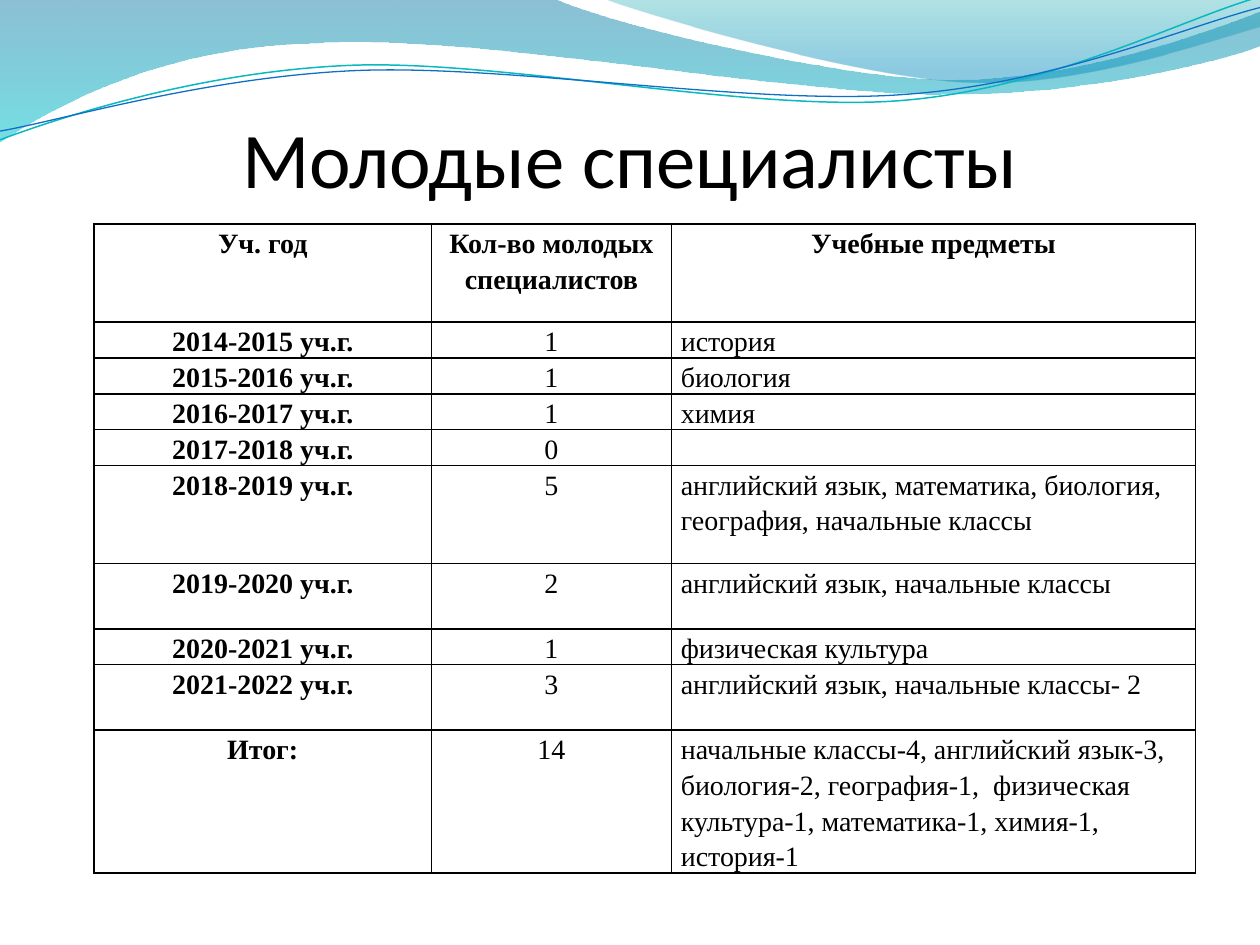
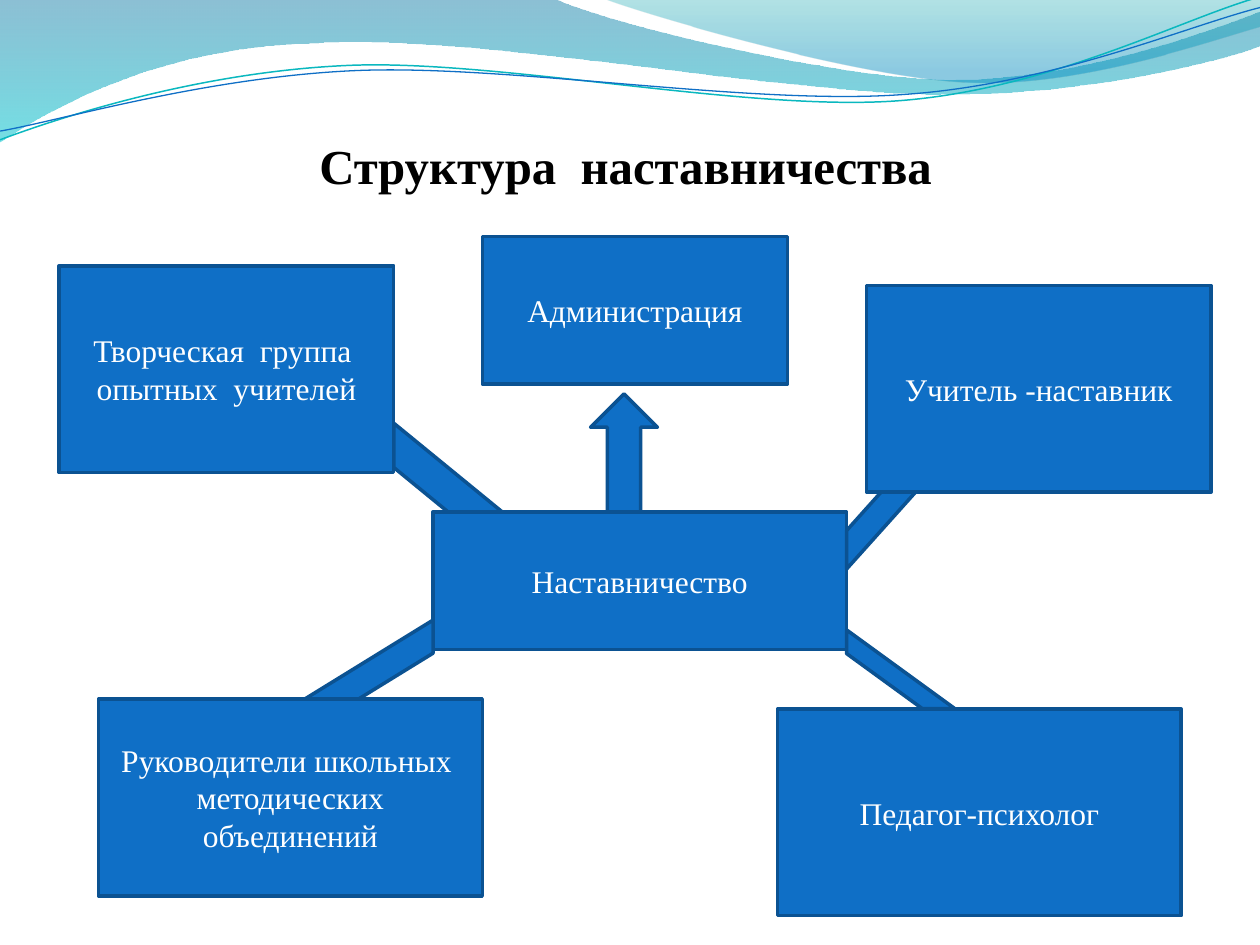
from lxml import etree
from pptx import Presentation
from pptx.dml.color import RGBColor
from pptx.enum.shapes import MSO_SHAPE
from pptx.enum.text import MSO_ANCHOR, MSO_AUTO_SIZE, PP_ALIGN
from pptx.oxml.ns import qn
from pptx.util import Pt

RECT, STRIPE, UP_ARROW = MSO_SHAPE.RECTANGLE, MSO_SHAPE.DIAGONAL_STRIPE, MSO_SHAPE.UP_ARROW
LEFT, CENTER = PP_ALIGN.LEFT, PP_ALIGN.CENTER
BOTTOM, MIDDLE = MSO_ANCHOR.BOTTOM, MSO_ANCHOR.MIDDLE
TITLE_ONLY = 5
SERIF, SANS = "Times New Roman", "Calibri"
COLORS = {
    "black": "000000", "white": "FFFFFF", "blue": "0F6FC6", "navy": "0B5292",
    "turquoise": "0AB8BF", "deep": "0074A1", "aqua": "00C6CF",
    "teal": "00A1A9", "sky": "008BBF",
}
RGB = {name: RGBColor.from_string(value) for name, value in COLORS.items()}


def put_text(tf, text, size=16, font=SERIF, color="black", bold=False,
             align=CENTER, spacing=None, anchor=None):
    """Fill a text frame, one paragraph per line of text."""
    if anchor is not None:
        tf.vertical_anchor = anchor
    for i, line in enumerate(text.split("\n")):
        p = tf.paragraphs[0] if i == 0 else tf.add_paragraph()
        p.alignment = align
        p.line_spacing = spacing
        if not line:
            etree.SubElement(p._p, qn("a:endParaRPr"), sz=str(size * 100))
            continue
        r = p.add_run()
        r.text = line
        r.font.size, r.font.name, r.font.bold = Pt(size), font, bold
        r.font.color.rgb = RGB[color]


def draw_wave(s, start, segments, closed):
    """Draw a freeform; a segment is a line end (2 numbers) or a Bezier (6)."""
    points = [(Pt(seg[i]), Pt(seg[i + 1]))
              for seg in segments for i in range(0, len(seg), 2)]
    builder = s.shapes.build_freeform(Pt(start[0]), Pt(start[1]))
    builder.add_line_segments(points, close=closed)
    sp = builder.convert_to_shape()
    sp.shadow.inherit = False
    lines = iter(list(sp._element.iter(qn("a:lnTo"))))
    for seg in segments:
        first = next(lines)
        if len(seg) == 6:
            curve = etree.Element(qn("a:cubicBezTo"))
            first.addprevious(curve)
            for line in (first, next(lines), next(lines)):
                curve.append(line[0])
                line.getparent().remove(line)
    return sp


prs = Presentation()
prs.slide_width, prs.slide_height = Pt(720), Pt(540)
layout = prs.slide_layouts[TITLE_ONLY]

# Slides with their titles
titles = [
    ("Молодые специалисты", (36, 66, 648, 51), dict(size=45, font=SANS)),
    ("Структура  наставничества", (33.5, 37.4, 648, 73.4), dict(size=27.9, bold=True)),
]
slides = []
for text, box, style in titles:
    s = prs.slides.add_slide(layout)
    sp = s.shapes.title
    sp.left, sp.top, sp.width, sp.height = map(Pt, box)
    tf = sp.text_frame
    tf.auto_size = MSO_AUTO_SIZE.NONE
    tf.word_wrap = True
    tf.margin_left = tf.margin_right = tf.margin_bottom = 0
    tf.margin_top = Pt(3.6)
    put_text(tf, text, anchor=BOTTOM, **style)
    slides.append(s)
table_slide, scheme_slide = slides

# Wave header, drawn once and moved to the shared layout
waves = []
bands = [
    ((0, 0), [(316.8, -0.7), (342.7, 12.2, 478.1, 45.4, 545.8, 45.4),
              (614.2, 45.4, 689.8, 18.7, 720, 6.5), (720.7, 25.9),
              (707.8, 31.7, 626.4, 54.7, 537.1, 54),
              (447.8, 54, 275, 20.2, 185, 24.5),
              (92.9, 25.9, 33.1, 59.8, -0.7, 81.4), (0, 0)],
     [("deep", 0, 45), ("aqua", 1, 55)]),
    ((344.9, -0.7), [(366.5, 7.9, 491, 44.6, 553.7, 46.8),
                     (616.3, 49.7, 691.9, 23, 720, 15.1), (720, 0), (344.9, -0.7)],
     [("teal", 0, 30), ("sky", 0.8, 45)]),
]
for start, segments, stops in bands:
    sp = draw_wave(table_slide, start, segments, True)
    sp.line.fill.background()
    sp.fill.gradient()
    sp.fill.gradient_angle = 270
    for stop, (color, position, _) in zip(sp.fill.gradient_stops, stops):
        stop.color.rgb = RGB[color]
        stop.position = position
    for clr, (_, _, opacity) in zip(sp._element.spPr.iter(qn("a:srgbClr")), stops):
        etree.SubElement(clr, qn("a:alpha"), val=str(opacity * 1000))
    waves.append(sp)

curves = [
    ((0, 79.9), [(34.6, 67, 113.8, 41, 199.4, 37.4),
                 (284.4, 33.8, 427, 64.1, 513.4, 57.6),
                 (599.8, 51.1, 675.4, 10.8, 718.6, -1.4)], "turquoise", 0.85),
    ((0, 74.9), [(33.8, 69.1, 118.1, 43.9, 203.8, 40.3),
                 (290.2, 36.7, 429.8, 60.5, 516.2, 54),
                 (601.9, 48.2, 677.5, 15.1, 720, 4.3)], "blue", 0.75),
]
for start, segments, color, width in curves:
    sp = draw_wave(table_slide, start, segments, False)
    sp.fill.background()
    sp.line.color.rgb = RGB[color]
    sp.line.width = Pt(width)
    waves.append(sp)
for i, sp in enumerate(waves):
    layout.shapes._spTree.insert(2 + i, sp._element)

# Slide 1: table of young specialists
rows = [
    (56.1, "Уч. год", "Кол-во молодых специалистов", "Учебные предметы"),
    (18.7, "2014-2015 уч.г.", "1", "история"),
    (18.7, "2015-2016 уч.г.", "1", "биология"),
    (18.7, "2016-2017 уч.г.", "1", "химия"),
    (18.7, "2017-2018 уч.г.", "0", ""),
    (56.1, "2018-2019 уч.г.", "5",
     "английский язык, математика, биология, география, начальные классы"),
    (37.3, "2019-2020 уч.г.", "2", "английский язык, начальные классы"),
    (18.7, "2020-2021 уч.г.", "1", "физическая культура"),
    (37.3, "2021-2022 уч.г.", "3", "английский язык, начальные классы- 2"),
    (74.8, "Итог:", "14",
     "начальные классы-4, английский язык-3, биология-2, география-1,  "
     "физическая культура-1, математика-1, химия-1, история-1"),
]
widths = [192.7, 137.2, 299.4]
table = table_slide.shapes.add_table(
    len(rows), len(widths), Pt(53.8), Pt(128), Pt(sum(widths)),
    Pt(sum(row[0] for row in rows))).table
table.first_row = table.horz_banding = False
for column, width in zip(table.columns, widths):
    column.width = Pt(width)
for i, (height, *texts) in enumerate(rows):
    table.rows[i].height = Pt(height)
    for j, text in enumerate(texts):
        cell = table.cell(i, j)
        cell.margin_left = cell.margin_right = Pt(5.4)
        cell.margin_top = cell.margin_bottom = 0
        put_text(cell.text_frame, text, bold=i == 0 or j == 0, spacing=1.15,
                 align=LEFT if i and j == 2 else CENTER)
        tcPr = cell._tc.get_or_add_tcPr()
        for side in ("lnL", "lnR", "lnT", "lnB"):
            ln = etree.SubElement(tcPr, qn("a:" + side), w=str(Pt(1)))
            fill = etree.SubElement(ln, qn("a:solidFill"))
            etree.SubElement(fill, qn("a:srgbClr"), val=COLORS["black"])
        cell.fill.background()

# Slide 2: mentoring scheme; kind, box, text, flips, adjustment
parts = [
    (RECT, (247.5, 292.5, 236.25, 78.75), "Наставничество", "", None),
    (RECT, (33.75, 151.88, 191.25, 118.13), "Творческая  группа  опытных  учителей", "", None),
    (RECT, (495.2, 163.2, 196.8, 118.1), "Учитель -наставник", "", None),
    (RECT, (56.25, 399.38, 219.38, 112.5),
     "Руководители школьных  методических\nобъединений", "", None),
    (RECT, (444.38, 405.2, 230.63, 118.1), "Педагог-психолог", "", None),
    (RECT, (275.63, 135, 174.38, 84.38), "Администрация", "", None),
    (UP_ARROW, (337.5, 225, 38.2, 67.5), "", "", None),
    (STRIPE, (174.38, 354.38, 73.13, 45), "", "HV", 0.58),
    (STRIPE, (483.75, 360, 61.88, 45), "", "V", 0.7),
    (STRIPE, (483.75, 281.25, 39.38, 43.9), "", "", None),
    (STRIPE, (225, 241.88, 61.88, 50.63), "", "V", None),
]
for kind, box, text, flips, adjustment in parts:
    sp = scheme_slide.shapes.add_shape(kind, *map(Pt, box))
    sp.shadow.inherit = False
    sp.fill.solid()
    sp.fill.fore_color.rgb = RGB["blue"]
    sp.line.color.rgb = RGB["navy"]
    sp.line.width = Pt(2)
    for axis in flips:
        sp._element.spPr.xfrm.set("flip" + axis, "1")
    if adjustment is not None:
        sp.adjustments[0] = adjustment
    if text:
        put_text(sp.text_frame, text, size=18, color="white", anchor=MIDDLE)

prs.save("out.pptx")
